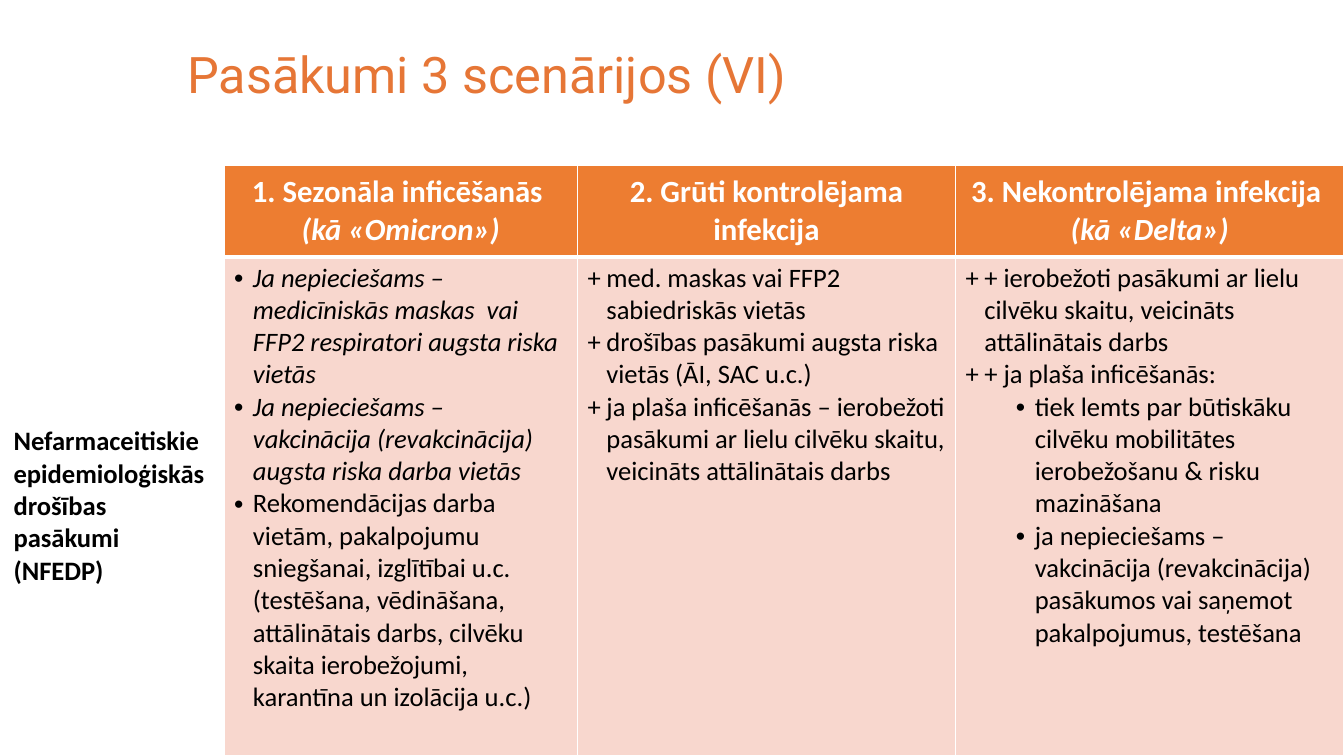
from lxml.etree import SubElement as Sub
from pptx import Presentation
from pptx.dml.color import RGBColor as Rgb
from pptx.enum.text import MSO_ANCHOR as Anchor, PP_ALIGN as Align
from pptx.oxml.ns import qn
from pptx.util import Pt

TITLE = "Pasākumi 3 scenārijos (VI)"
HEADS = [
    "1. Sezonāla inficēšanās \v(kā «Omicron»)",
    "2. Grūti kontrolējama infekcija",
    "3. Nekontrolējama infekcija \v(kā «Delta»)",
]
LABEL = "Nefarmaceitiskie epidemioloģiskās drošības pasākumi (NFEDP)"
# (bullet, level, italic, text)
LISTS = [
    [
        ("•", 0, True, "Ja nepieciešams – medicīniskās maskas  vai FFP2 respiratori augsta riska vietās"),
        ("•", 0, True, "Ja nepieciešams – vakcinācija (revakcinācija) augsta riska darba vietās"),
        ("•", 0, False, "Rekomendācijas darba vietām, pakalpojumu sniegšanai, izglītībai u.c. "
         "(testēšana, vēdināšana, attālinātais darbs, cilvēku skaita ierobežojumi, "
         "karantīna un izolācija u.c.)"),
    ],
    [
        ("+", 0, False, "med. maskas vai FFP2 sabiedriskās vietās"),
        ("+", 0, False, "drošības pasākumi augsta riska vietās (ĀI, SAC u.c.)"),
        ("+", 0, False, "ja plaša inficēšanās – ierobežoti pasākumi ar lielu cilvēku skaitu, "
         "veicināts attālinātais darbs"),
    ],
    [
        ("+", 0, False, "+ ierobežoti pasākumi ar lielu cilvēku skaitu, veicināts attālinātais darbs"),
        ("+", 0, False, "+ ja plaša inficēšanās:"),
        ("•", 1, False, "tiek lemts par būtiskāku cilvēku mobilitātes ierobežošanu & risku mazināšana"),
        ("•", 1, False, "ja nepieciešams – vakcinācija (revakcinācija) pasākumos vai saņemot "
         "pakalpojumus, testēšana"),
    ],
]
COLORS = {"title": "E67636", "head": "ED7D31", "body": "F8D7CE",
          "white": "FFFFFF", "black": "000000"}
WIDTHS = [157.5, 252.5, 270, 277.5]
ROWS = [65.5, 356.5]
INDENT, STEP = 13.5, 36
THIN, THICK = 1, 3


def style(run, size, color, font="Calibri", bold=False, italic=False):
    run.font.size, run.font.name = Pt(size), font
    run.font.bold, run.font.italic = bold, italic
    run.font.color.rgb = Rgb.from_string(COLORS[color])


def border(cell, top, bottom):
    props = cell._tc.get_or_add_tcPr()
    for side, width in zip("LRTB", (THIN, THIN, top, bottom)):
        line = Sub(props, qn("a:ln" + side), w=str(Pt(width)))
        fill = Sub(line, qn("a:solidFill"))
        Sub(fill, qn("a:srgbClr"), val=COLORS["white"])


def paint(cell, color):
    cell.fill.solid()
    cell.fill.fore_color.rgb = Rgb.from_string(COLORS[color])


def bullet(para, mark, level):
    para.level = level
    props = para._p.get_or_add_pPr()
    props.set("marL", str(Pt(INDENT + STEP * level)))
    props.set("indent", str(-Pt(INDENT)))
    Sub(props, qn("a:buFont"), typeface="Arial" if mark == "•" else "Calibri")
    Sub(props, qn("a:buChar"), char=mark)


def main():
    deck = Presentation()
    deck.slide_width, deck.slide_height = Pt(960), Pt(540)
    slide = deck.slides.add_slide(deck.slide_layouts[5])

    title = slide.shapes.title
    title.left, title.top, title.width, title.height = Pt(126.5), Pt(3), Pt(770), Pt(104)
    title.text_frame.text = TITLE
    title.text_frame.vertical_anchor = Anchor.MIDDLE
    para = title.text_frame.paragraphs[0]
    para.alignment, para.line_spacing = Align.LEFT, 0.9
    style(para.runs[0], 36, "title", "Roboto")

    frame = slide.shapes.add_table(2, 4, Pt(2.5), Pt(118), Pt(sum(WIDTHS)), Pt(sum(ROWS)))
    table = frame.table
    table.first_row = table.horz_banding = False
    for col, width in zip(table.columns, WIDTHS):
        col.width = Pt(width)
    for row, height in zip(table.rows, ROWS):
        row.height = Pt(height)

    table.cell(0, 0).fill.background()
    label = table.cell(1, 0)
    label.fill.background()
    label.vertical_anchor = Anchor.MIDDLE
    label.text_frame.text = LABEL
    style(label.text_frame.paragraphs[0].runs[0], 19, "black", bold=True)

    for col, (head, items) in enumerate(zip(HEADS, LISTS), 1):
        cell = table.cell(0, col)
        border(cell, THIN, THICK)
        paint(cell, "head")
        cell.vertical_anchor = Anchor.MIDDLE
        cell.text_frame.text = head
        para = cell.text_frame.paragraphs[0]
        para.alignment = Align.CENTER
        for num, run in enumerate(para.runs):
            style(run, 22, "white", bold=True, italic=num == 1)

        cell = table.cell(1, col)
        border(cell, THICK, THIN)
        paint(cell, "body")
        cell.text_frame.text = "\n".join(item[-1] for item in items)
        for para, (mark, level, italic, _) in zip(cell.text_frame.paragraphs, items):
            bullet(para, mark, level)
            style(para.runs[0], 19, "black", italic=italic)

    deck.save("out.pptx")


if __name__ == "__main__":
    main()
